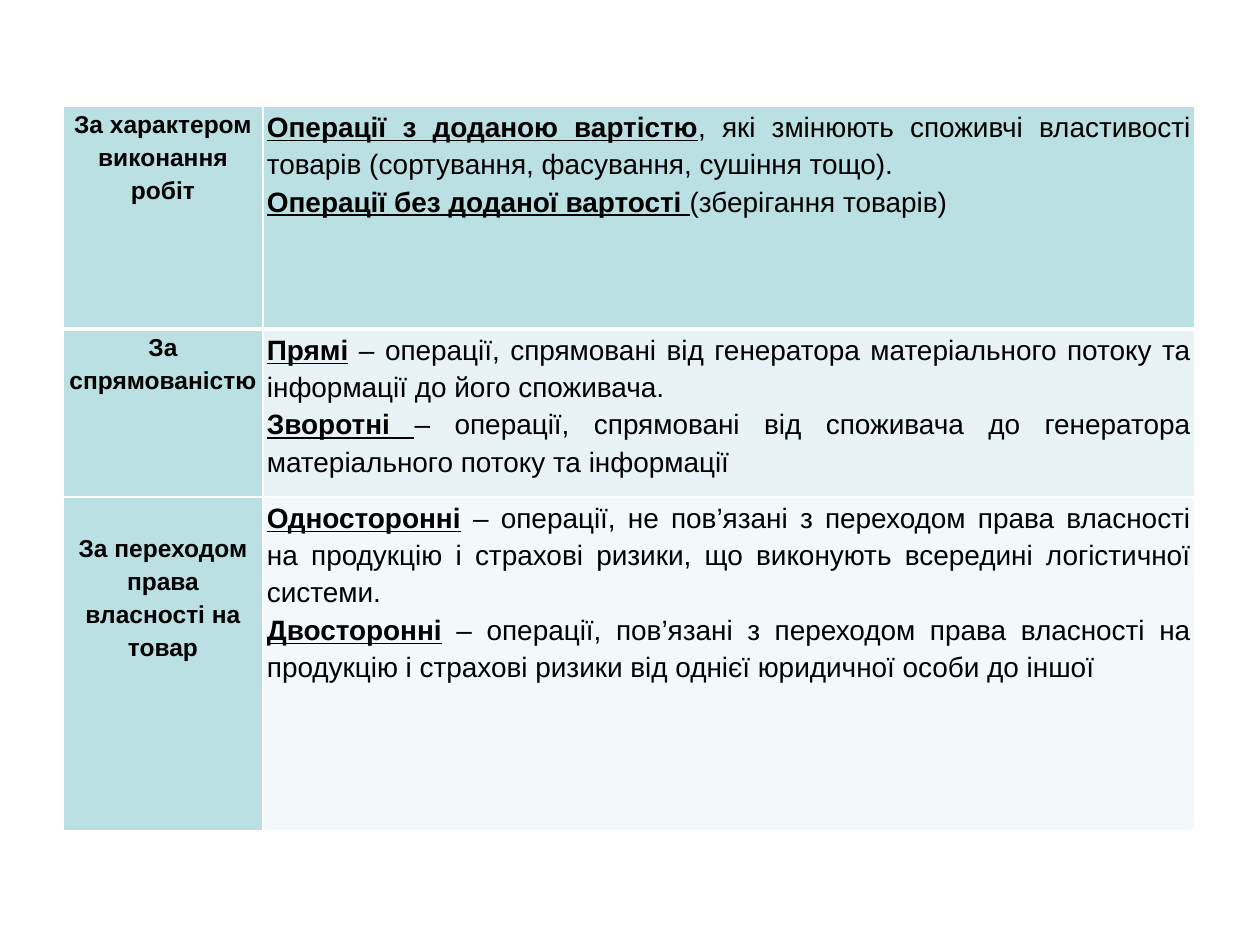
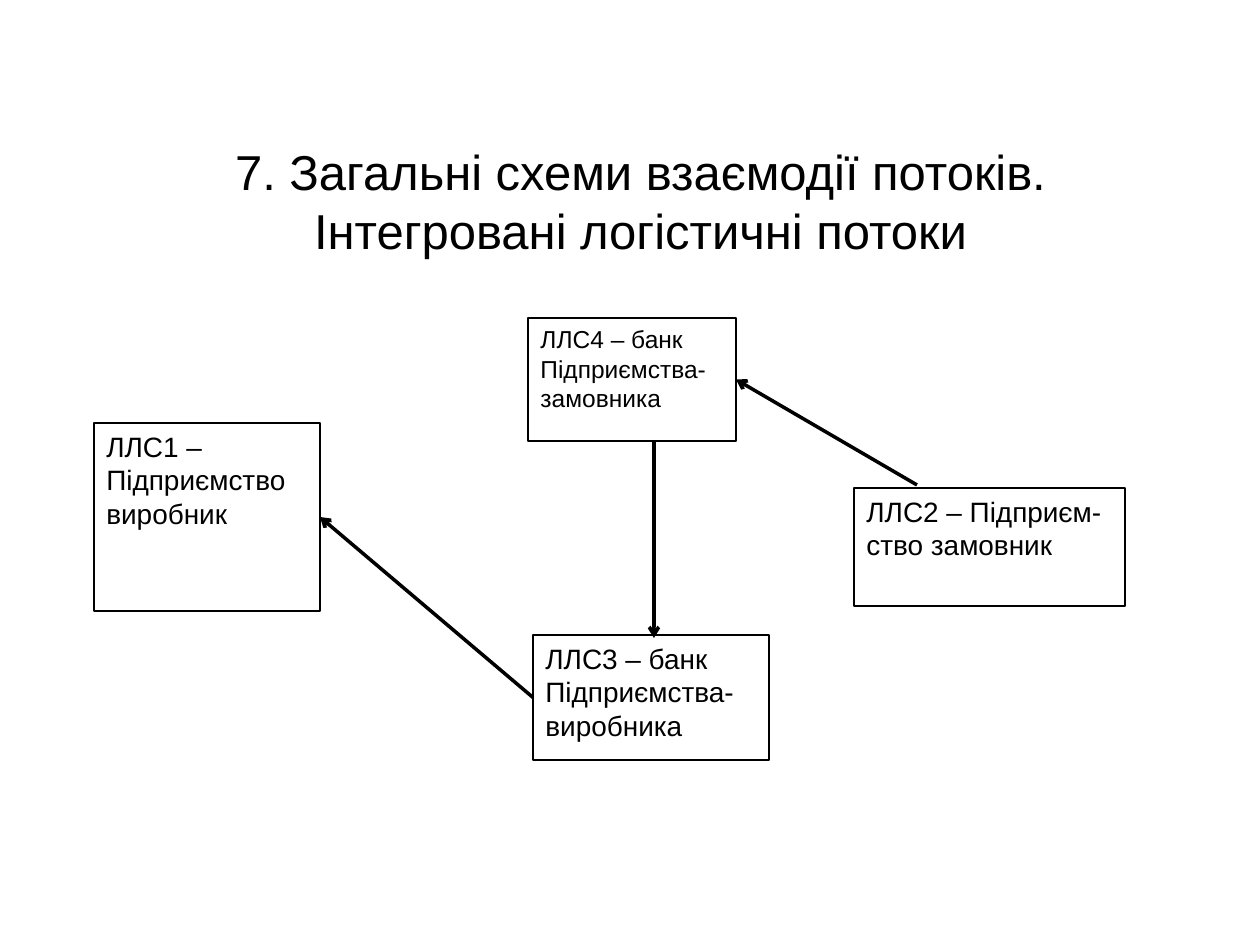
from lxml.etree import SubElement
from pptx import Presentation
from pptx.dml.color import RGBColor
from pptx.enum.shapes import MSO_CONNECTOR, MSO_SHAPE
from pptx.enum.text import MSO_ANCHOR, PP_ALIGN
from pptx.oxml.ns import qn
from pptx.util import Emu, Pt

FONT = "Arial"
BLACK, WHITE = "000000", "FFFFFF"
TEAL, PALE_TEAL, ICE = "BBE0E3", "E7F3F4", "F3F9FA"
TOP, LEFT, BOTTOM, RIGHT = range(4)

OPERATIONS = [
    ("За характером виконання робіт", TEAL, 223, 0, [
        ("Операції з доданою вартістю",
         ", які змінюють споживчі властивості товарів (сортування, фасування, сушіння тощо)."),
        ("Операції без доданої вартості ", "(зберігання товарів)"),
    ]),
    ("За спрямованістю", PALE_TEAL, 168, 0, [
        ("Прямі",
         " – операції, спрямовані від генератора матеріального потоку та інформації до його споживача."),
        ("Зворотні ",
         "– операції, спрямовані від споживача до генератора матеріального потоку та інформації"),
    ]),
    ("За переходом права власності на товар", ICE, 334, 33, [
        ("Односторонні",
         " – операції, не пов’язані з переходом права власності на продукцію і страхові ризики, "
         "що виконують всередині логістичної системи."),
        ("Двосторонні",
         " – операції, пов’язані з переходом права власності на продукцію і страхові ризики "
         "від однієї юридичної особи до іншої"),
    ]),
]


def px(length):
    return Emu(round(length * 914400 / 126))


def rgb(color):
    return RGBColor.from_string(color)


def add_run(paragraph, text, size, bold=False, underline=False):
    run = paragraph.add_run()
    run.text = text
    run.font.name = FONT
    run.font.size = Pt(size)
    run.font.bold = bold
    run.font.underline = underline
    run.font.color.rgb = rgb(BLACK)


def add_paragraph(frame, index, align, spacing=None):
    paragraph = frame.add_paragraph() if index else frame.paragraphs[0]
    paragraph.alignment = align
    paragraph.line_spacing = spacing
    return paragraph


def style_cell(cell, color, bottom_width, top_margin=0):
    cell.margin_left = cell.margin_right = px(4)
    cell.margin_top, cell.margin_bottom = px(top_margin), 0
    cell.vertical_anchor = MSO_ANCHOR.TOP
    properties = cell._tc.get_or_add_tcPr()
    for side, width in (("L", 1), ("R", 1), ("T", 1), ("B", bottom_width)):
        border = SubElement(properties, qn(f"a:ln{side}"), w=str(Pt(width)))
        SubElement(SubElement(border, qn("a:solidFill")), qn("a:srgbClr"), val=WHITE)
    cell.fill.solid()
    cell.fill.fore_color.rgb = rgb(color)


def add_operations_table(slide, left, top, widths):
    height = sum(row[2] for row in OPERATIONS)
    table = slide.shapes.add_table(len(OPERATIONS), len(widths), px(left), px(top),
                                   px(sum(widths)), px(height)).table
    table.first_row = table.horz_banding = False
    for column, width in zip(table.columns, widths):
        column.width = px(width)
    for index, (feature, color, row_height, label_margin, kinds) in enumerate(OPERATIONS):
        table.rows[index].height = px(row_height)
        label, description = table.cell(index, 0), table.cell(index, 1)
        bottom_width = 1 if index else 3
        style_cell(label, TEAL, bottom_width, label_margin)
        style_cell(description, color, bottom_width)
        add_run(add_paragraph(label.text_frame, 0, PP_ALIGN.CENTER, 1.2), feature, 14, bold=True)
        for order, (kind, meaning) in enumerate(kinds):
            paragraph = add_paragraph(description.text_frame, order, PP_ALIGN.JUSTIFY, 1.2)
            add_run(paragraph, kind, 16, bold=True, underline=True)
            add_run(paragraph, meaning, 16)


def add_title(slide, left, top, width, height, text):
    frame = slide.shapes.add_textbox(px(left), px(top), px(width), px(height)).text_frame
    frame.word_wrap = True
    add_run(add_paragraph(frame, 0, PP_ALIGN.CENTER), text, 28)


def add_participant(slide, left, top, width, height, lines, size=16):
    participant = slide.shapes.add_shape(MSO_SHAPE.RECTANGLE, px(left), px(top),
                                         px(width), px(height))
    participant.shadow.inherit = False
    participant.fill.solid()
    participant.fill.fore_color.rgb = rgb(WHITE)
    participant.line.color.rgb = rgb(BLACK)
    participant.line.width = Pt(0.75)
    frame = participant.text_frame
    frame.word_wrap = True
    frame.vertical_anchor = MSO_ANCHOR.TOP
    for index, line in enumerate(lines):
        add_run(add_paragraph(frame, index, PP_ALIGN.LEFT), line, size)
    return participant


def add_flow(slide, start=(0, 0), end=(0, 0), source=None, target=None):
    flow = slide.shapes.add_connector(MSO_CONNECTOR.STRAIGHT, *map(px, start + end))
    if source:
        flow.begin_connect(*source)
    if target:
        flow.end_connect(*target)
    flow.line.color.rgb = rgb(BLACK)
    flow.line.width = Pt(2)
    SubElement(flow.line._get_or_add_ln(), qn("a:tailEnd"), type="arrow")
    SubElement(flow._element.spPr, qn("a:effectLst"))


def add_flow_scheme(slide, left, top):
    def at(x, y):
        return left + x, top + y

    customer_bank = add_participant(slide, *at(434, 0), 208, 123,
                                    ["ЛЛС4 ‒ банк", "Підприємства-замовника"], 14)
    producer_bank = add_participant(slide, *at(439, 317), 236, 125,
                                    ["ЛЛС3 ‒ банк", "Підприємства-виробника"])
    producer = add_participant(slide, *at(0, 105), 226, 188,
                               ["ЛЛС1 ‒ Підприємство виробник"])
    add_participant(slide, *at(760, 170), 271, 118, ["ЛЛС2 ‒ Підприєм-ство замовник"])
    add_flow(slide, start=at(823, 167), target=(customer_bank, RIGHT))
    add_flow(slide, start=at(560, 123), end=at(560, 320))
    add_flow(slide, source=(producer_bank, LEFT), target=(producer, RIGHT))


def main():
    deck = Presentation()
    deck.slide_width, deck.slide_height = px(1260), px(945)
    blank = deck.slide_layouts[6]
    add_operations_table(deck.slides.add_slide(blank), 63, 106, (200, 932))
    scheme = deck.slides.add_slide(blank)
    add_title(scheme, 95, 135, 1091, 131,
              "7. Загальні схеми взаємодії потоків. Інтегровані логістичні потоки")
    add_flow_scheme(scheme, 94, 318)
    deck.save("out.pptx")


if __name__ == "__main__":
    main()
